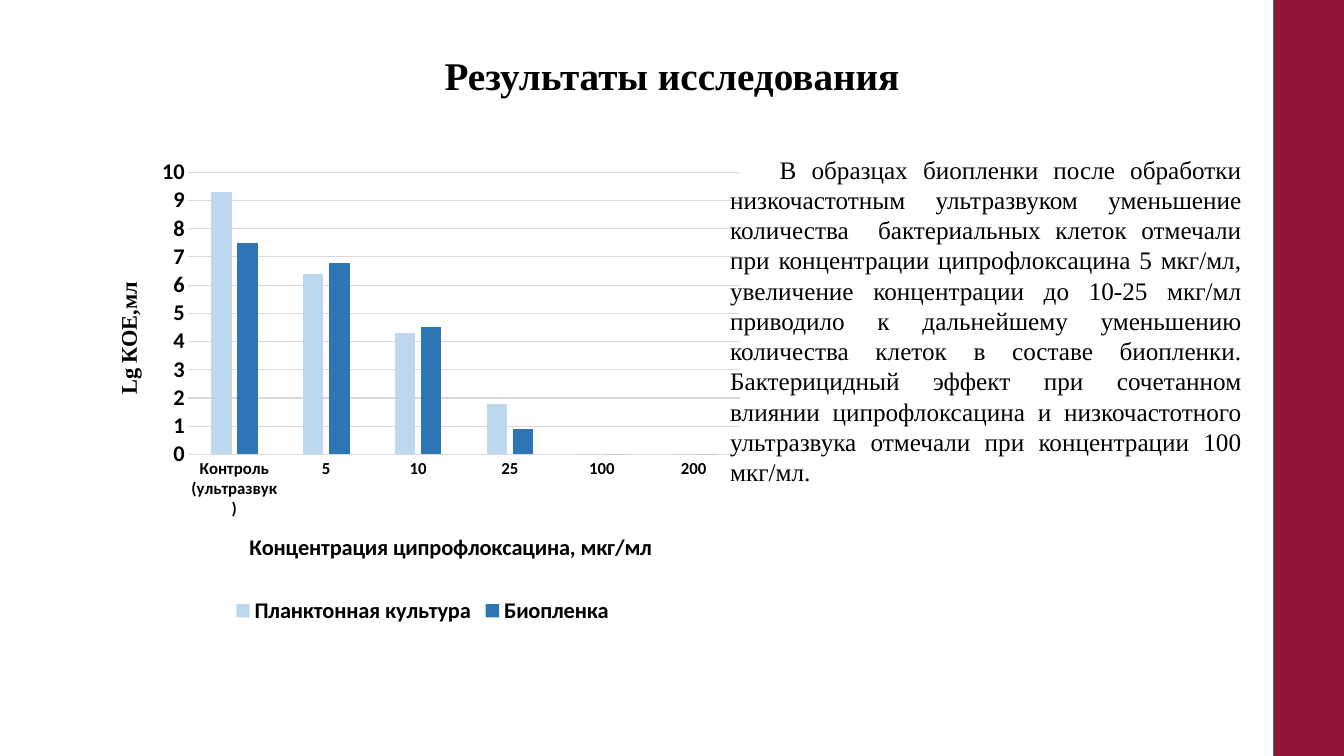
from pptx import Presentation
from pptx.chart.data import CategoryChartData
from pptx.dml.color import RGBColor
from pptx.enum.chart import XL_CHART_TYPE, XL_LEGEND_POSITION, XL_TICK_MARK
from pptx.enum.shapes import MSO_SHAPE
from pptx.enum.text import MSO_ANCHOR, PP_ALIGN
from pptx.util import Pt

PX = 9525  # EMU, 96 px to the inch
COLORS = {
    "text": "000000",
    "grid": "D9D9D9",
    "plankton": "BDD7EE",
    "biofilm": "2E75B6",
    "stripe": "911737",
    "stripe_edge": "43739E",
}
SERIF, SANS = "Times New Roman", "Calibri"


def format_font(font, size, name=SANS, bold=True):
    font.size = Pt(size)
    font.name = name
    font.bold = bold
    font.color.rgb = RGBColor.from_string(COLORS["text"])


def write(frame, text, size, name=SANS, bold=True, align=PP_ALIGN.CENTER,
          spacing=None, indent=0):
    """Fill a text frame with one formatted paragraph; indent is in px."""
    paragraph = frame.paragraphs[0]
    paragraph.alignment = align
    paragraph.line_spacing = spacing
    if indent:
        paragraph._p.get_or_add_pPr().set("indent", str(indent * PX))
    run = paragraph.add_run()
    run.text = text
    format_font(run.font, size, name, bold)


prs = Presentation()
prs.slide_width, prs.slide_height = 1280 * PX, 720 * PX
slide = prs.slides.add_slide(prs.slide_layouts[5])

# Title
heading = slide.shapes.title
heading.left, heading.top, heading.width, heading.height = (
    v * PX for v in (88, 38, 1104, 73))
heading.text_frame.vertical_anchor = MSO_ANCHOR.MIDDLE
write(heading.text_frame, "Результаты исследования", 28, name=SERIF, spacing=0.9)

# Chart of cell counts
counts = CategoryChartData()
counts.categories = ["Контроль (ультразвук)", "5", "10", "25", "100", "200"]
counts.add_series("Планктонная культура", (9.3, 6.4, 4.3, 1.8, 0, 0))
counts.add_series("Биопленка", (7.5, 6.8, 4.5, 0.9, 0, 0))
chart = slide.shapes.add_chart(
    XL_CHART_TYPE.COLUMN_CLUSTERED, 88 * PX, 142 * PX, 629 * PX, 457 * PX, counts).chart
format_font(chart.font, 10, bold=False)
chart.has_title = False

columns = chart.plots[0]
columns.vary_by_categories = False
columns.gap_width, columns.overlap = 219, -27
for series, color in zip(columns.series, ("plankton", "biofilm")):
    series.format.fill.solid()
    series.format.fill.fore_color.rgb = RGBColor.from_string(COLORS[color])

concentration, cell_count = chart.category_axis, chart.value_axis
for axis, label_size, caption, caption_font in (
        (concentration, 12, "Концентрация ципрофлоксацина, мкг/мл", SANS),
        (cell_count, 16, "Lg КОЕ,мл", SERIF)):
    axis.major_tick_mark = axis.minor_tick_mark = XL_TICK_MARK.NONE
    format_font(axis.tick_labels.font, label_size)
    write(axis.axis_title.text_frame, caption, 16, name=caption_font)
cell_count.axis_title.text_frame._txBody.bodyPr.set("rot", "-5400000")
cell_count.minimum_scale, cell_count.maximum_scale, cell_count.major_unit = 0, 10, 1
cell_count.format.line.fill.background()
for line in (concentration.format.line, cell_count.major_gridlines.format.line):
    line.color.rgb = RGBColor.from_string(COLORS["grid"])
    line.width = Pt(0.75)

chart.has_legend = True
chart.legend.position = XL_LEGEND_POSITION.BOTTOM
chart.legend.include_in_layout = False
format_font(chart.legend.font, 16)

# Stripe along the right edge
stripe = slide.shapes.add_shape(
    MSO_SHAPE.RECTANGLE, 1213 * PX, -8 * PX, 79 * PX, 734 * PX)
stripe.shadow.inherit = False
stripe.fill.solid()
stripe.fill.fore_color.rgb = RGBColor.from_string(COLORS["stripe"])
stripe.line.color.rgb = RGBColor.from_string(COLORS["stripe_edge"])
stripe.line.width = Pt(1)

# Findings
findings = slide.shapes.add_textbox(686 * PX, 142 * PX, 506 * PX, 359 * PX).text_frame
findings.word_wrap = True
write(
    findings,
    "В образцах биопленки после обработки низкочастотным ультразвуком уменьшение "
    "количества  бактериальных клеток отмечали при концентрации ципрофлоксацина "
    "5 мкг/мл, увеличение концентрации до 10-25 мкг/мл приводило к дальнейшему "
    "уменьшению количества клеток в составе биопленки. Бактерицидный эффект при "
    "сочетанном влиянии ципрофлоксацина и низкочастотного ультразвука отмечали "
    "при концентрации 100 мкг/мл.",
    18, name=SERIF, bold=False, align=PP_ALIGN.JUSTIFY, indent=47)

prs.save("out.pptx")
